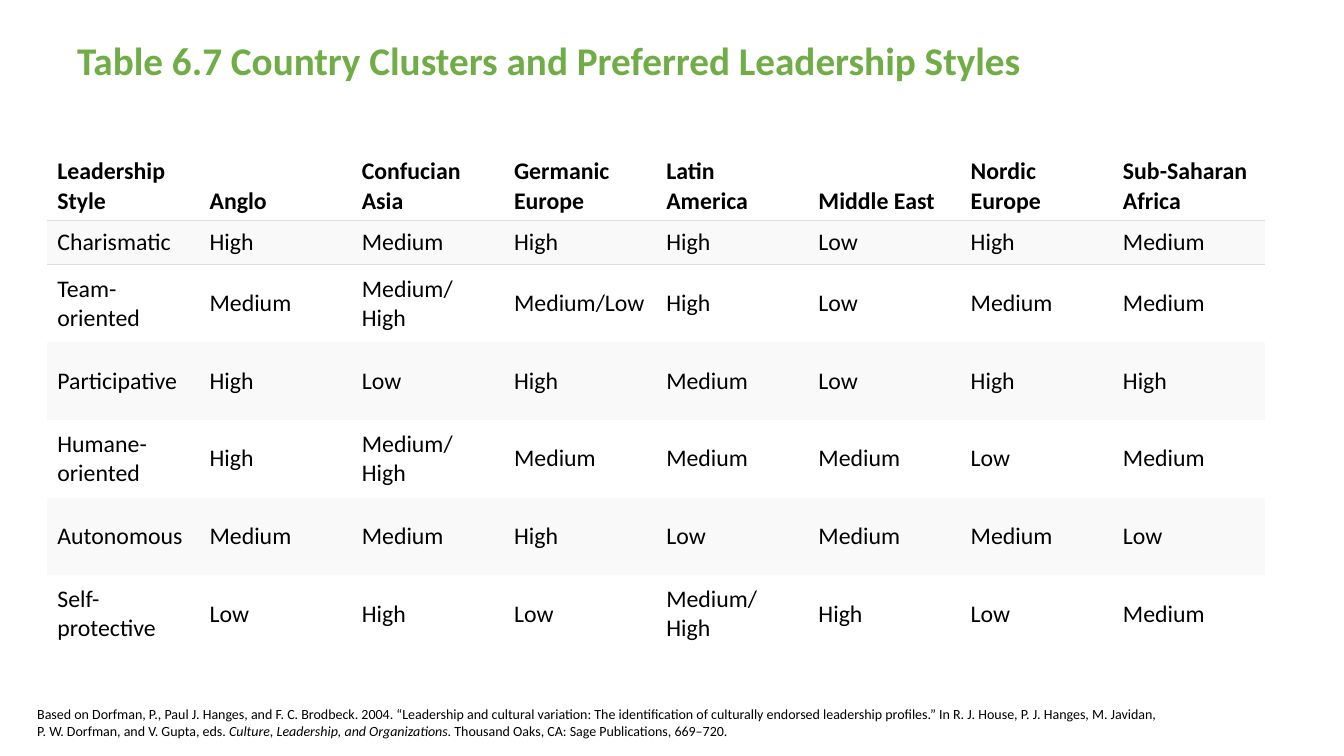
from dataclasses import dataclass

from pptx import Presentation
from pptx.dml.color import RGBColor
from pptx.enum.text import MSO_ANCHOR
from pptx.oxml import parse_xml
from pptx.oxml.ns import nsdecls, qn
from pptx.util import Emu, Pt

EMU_PER_PX = 9525
SLIDE_SIZE = (1280, 720)
TOP, MIDDLE, BOTTOM = MSO_ANCHOR.TOP, MSO_ANCHOR.MIDDLE, MSO_ANCHOR.BOTTOM
NO_STYLE_NO_GRID = "{2D5ABB26-0587-4C30-8999-92F81FD0307C}"


@dataclass(frozen=True)
class Theme:
    """Colours, font and type sizes of the slide."""
    font: str = "Calibri"
    heading: str = "70AD47"
    ink: str = "000000"
    stripe: str = "F9F9F9"
    rule: str = "DDDDDD"
    heading_size: int = 28
    table_size: int = 17
    source_size: int = 10


THEME = Theme()

TITLE = "Table 6.7 Country Clusters and Preferred Leadership Styles"
CLUSTERS = ["Leadership Style", "Anglo", "Confucian Asia", "Germanic Europe",
            "Latin America", "Middle East", "Nordic Europe", "Sub-Saharan Africa"]
PREFERENCES = [
    ["Charismatic", "High", "Medium", "High", "High", "Low", "High", "Medium"],
    ["Team-oriented", "Medium", "Medium/ High", "Medium/Low", "High", "Low", "Medium", "Medium"],
    ["Participative", "High", "Low", "High", "Medium", "Low", "High", "High"],
    ["Humane-oriented", "High", "Medium/ High", "Medium", "Medium", "Medium", "Low", "Medium"],
    ["Autonomous", "Medium", "Medium", "High", "Low", "Medium", "Medium", "Low"],
    ["Self-protective", "Low", "High", "Low", "Medium/ High", "High", "Low", "Medium"],
]
SOURCE = [
    ("Based on Dorfman, P., Paul J. Hanges, and F. C. Brodbeck. 2004. “Leadership and cultural "
     "variation: The identification of culturally endorsed leadership profiles.” In R. J. House, "
     "P. J. Hanges, M. Javidan, P. W. Dorfman, and V. Gupta, eds. ", {}),
    ("Culture, Leadership, and Organizations.", {"italic": True}),
    (" Thousand Oaks, CA: Sage Publications, 669–720.", {}),
]


def px(length):
    """Turn whole pixels into EMU."""
    return Emu(length * EMU_PER_PX)


def add_run(paragraph, text, size, color=THEME.ink, **formats):
    """Append a run of text in the theme font."""
    run = paragraph.add_run()
    run.text = text
    for name, value in {"name": THEME.font, "size": Pt(size), **formats}.items():
        setattr(run.font, name, value)
    run.font.color.rgb = RGBColor.from_string(color)


def add_text_frame(slide, box, anchor):
    """Add a wrapping text box and return its text frame."""
    frame = slide.shapes.add_textbox(*map(px, box)).text_frame
    frame.word_wrap = True
    frame.vertical_anchor = anchor
    return frame


def add_title(slide, box):
    """Place the table's title."""
    paragraph = add_text_frame(slide, box, MIDDLE).paragraphs[0]
    paragraph.line_spacing = 0.9
    add_run(paragraph, TITLE, THEME.heading_size, THEME.heading, bold=True)


def add_cell_rule(cell, side):
    """Draw a thin line on one side of a cell."""
    cell._tc.get_or_add_tcPr().insert(0, parse_xml(
        f'<a:{side} {nsdecls("a")} w="{Pt(1)}"><a:solidFill>'
        f'<a:srgbClr val="{THEME.rule}"/></a:solidFill></a:{side}>'))


def add_preferences(slide, box, header_height, first_height):
    """Place the striped table of styles by country cluster."""
    left, top, width, height = box
    rows = [CLUSTERS, *PREFERENCES]
    other_height = (height - header_height - first_height) // (len(rows) - 2)
    heights = [header_height, first_height] + [other_height] * (len(rows) - 2)
    table = slide.shapes.add_table(len(rows), len(CLUSTERS), *map(px, box)).table
    table._tbl.tblPr.find(qn("a:tableStyleId")).text = NO_STYLE_NO_GRID
    table.horz_banding = False
    for column in table.columns:
        column.width = px(width // len(CLUSTERS))
    for index, (entries, row_height) in enumerate(zip(rows, heights)):
        table.rows[index].height = px(row_height)
        is_header = index == 0
        for cell, entry in zip(table.rows[index].cells, entries):
            cell.vertical_anchor = BOTTOM if is_header else MIDDLE
            add_run(cell.text_frame.paragraphs[0], entry, THEME.table_size, bold=is_header)
            if index % 2:
                cell.fill.solid()
                cell.fill.fore_color.rgb = RGBColor.from_string(THEME.stripe)
            else:
                cell.fill.background()
            if index < 2:
                add_cell_rule(cell, "lnB" if is_header else "lnT")


def add_source(slide, box):
    """Place the reference below the table."""
    paragraph = add_text_frame(slide, box, TOP).paragraphs[0]
    for text, formats in SOURCE:
        add_run(paragraph, text, THEME.source_size, **formats)


def main():
    """Build and save the slide."""
    deck = Presentation()
    deck.slide_width, deck.slide_height = map(px, SLIDE_SIZE)
    slide = deck.slides.add_slide(deck.slide_layouts[6])
    add_title(slide, (64, 25, 1129, 69))
    add_preferences(slide, (45, 104, 1160, 518), header_height=106, first_height=42)
    add_source(slide, (26, 667, 1094, 53))
    deck.save("out.pptx")


if __name__ == "__main__":
    main()
